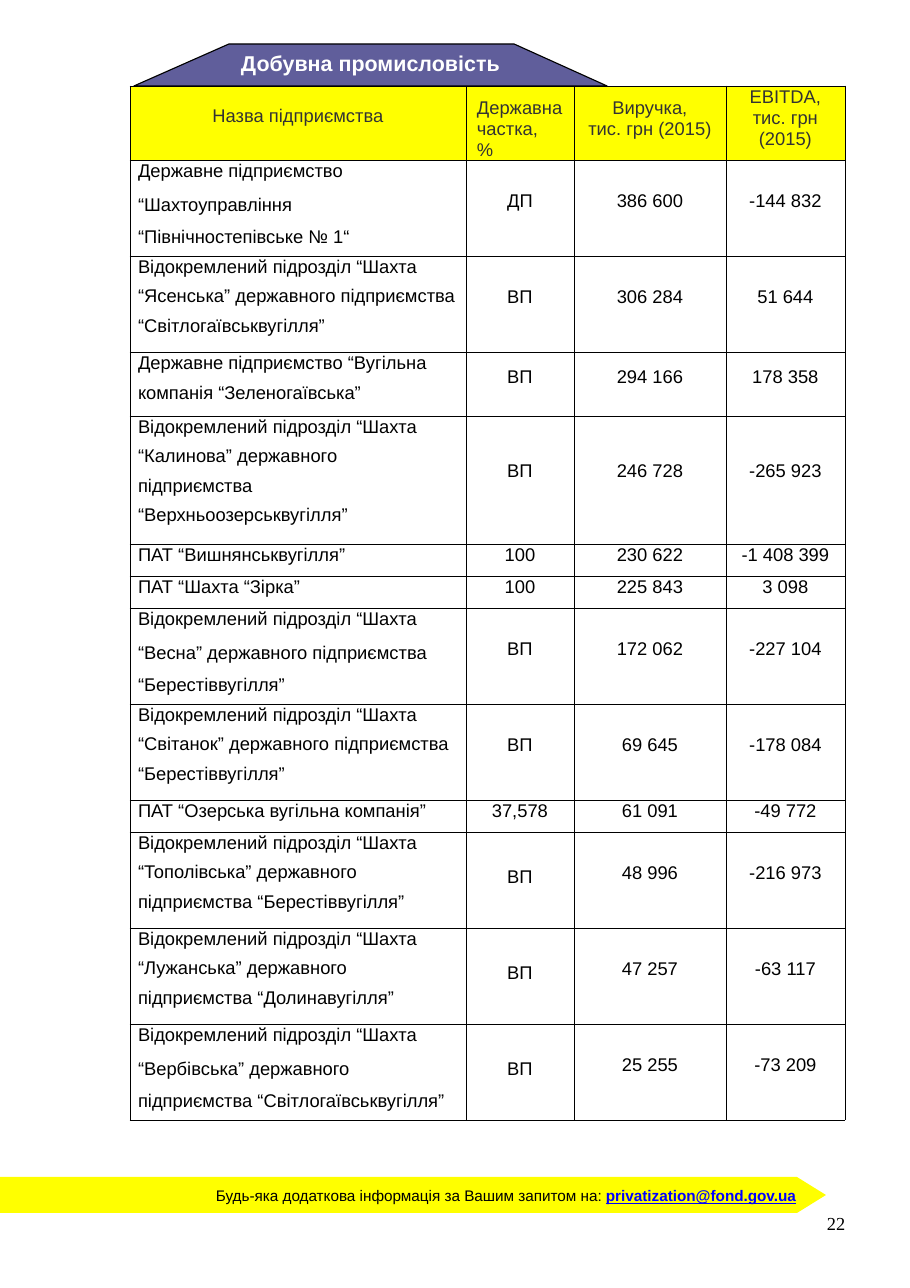
from lxml import etree
from pptx import Presentation
from pptx.dml.color import RGBColor
from pptx.enum.text import MSO_ANCHOR, PP_ALIGN as Align
from pptx.oxml.ns import qn
from pptx.util import Pt

PX = 8298  # EMU in one px
SLIDE_W, SLIDE_H = 910, 1288

BLACK = RGBColor(0x00, 0x00, 0x00)
WHITE = RGBColor(0xFF, 0xFF, 0xFF)
GRAPHITE = RGBColor(0x33, 0x33, 0x33)
YELLOW = RGBColor(0xFF, 0xFF, 0x00)
VIOLET = RGBColor(0x60, 0x5E, 0x9B)
LINK_BLUE = RGBColor(0x00, 0x00, 0xFF)

TITLE = "Добувна промисловість"
CONTACT = "Будь-яка додаткова інформація за Вашим запитом на: "
EMAIL = "privatization@fond.gov.ua"
PAGE = "22"

# Heading lines, alignment, top margin, left margin
HEADINGS = [
    (["Назва підприємства"], Align.CENTER, 19, 0),
    (["Державна", "частка,", "%"], Align.LEFT, 11, 11),
    (["Виручка,", "тис. грн (2015)"], Align.CENTER, 11, 0),
    (["EBITDA,", "тис. грн", "(2015)"], Align.CENTER, 0, 0),
]

# Line spacing and space before for the lines below the first one
WIDE = (Pt(20.8), Pt(1.6))
LOOSE = (1.43, Pt(0.1))
SINGLE = (1.0, Pt(6.4))

UNIT_MINE = "Відокремлений підрозділ “Шахта"

# Name lines, their spacing, state share, revenue, EBITDA
ENTERPRISES = [
    (["Державне підприємство", "“Шахтоуправління", "“Північностепівське № 1“"],
     WIDE, "ДП", "386 600", "-144 832"),
    ([UNIT_MINE, "“Ясенська” державного підприємства", "“Світлогаївськвугілля”"],
     LOOSE, "ВП", "306 284", "51 644"),
    (["Державне підприємство “Вугільна", "компанія “Зеленогаївська”"],
     SINGLE, "ВП", "294 166", "178 358"),
    ([UNIT_MINE, "“Калинова” державного", "підприємства", "“Верхньоозерськвугілля”"],
     LOOSE, "ВП", "246 728", "-265 923"),
    (["ПАТ “Вишнянськвугілля”"], SINGLE, "100", "230 622", "-1 408 399"),
    (["ПАТ “Шахта “Зірка”"], SINGLE, "100", "225 843", "3 098"),
    ([UNIT_MINE, "“Весна” державного підприємства", "“Берестіввугілля”"],
     WIDE, "ВП", "172 062", "-227 104"),
    ([UNIT_MINE, "“Світанок” державного підприємства", "“Берестіввугілля”"],
     LOOSE, "ВП", "69 645", "-178 084"),
    (["ПАТ “Озерська вугільна компанія”"], SINGLE, "37,578", "61 091", "-49 772"),
    ([UNIT_MINE, "“Тополівська” державного", "підприємства “Берестіввугілля”"],
     LOOSE, "ВП", "48 996", "-216 973"),
    ([UNIT_MINE, "“Лужанська” державного", "підприємства “Долинавугілля”"],
     LOOSE, "ВП", "47 257", "-63 117"),
    ([UNIT_MINE, "“Вербівська” державного", "підприємства “Світлогаївськвугілля”"],
     WIDE, "ВП", "25 255", "-73 209"),
]

TABLE_LEFT, TABLE_TOP = 130, 86
COLUMN_WIDTHS = [336, 108, 152, 119]
HEADING_HEIGHT, LINE_HEIGHT = 74, 32
VALUE_TOP = {1: 0, 2: 14, 3: 30, 4: 44}  # by number of name lines
LOWER_SHARE_TOP, LOWER_SHARE_ROWS = 34, 3
NAME_LEFT = 8

TITLE_OUTLINE = [(229, 44), (514, 44), (607, 86), (134, 86)]
CONTACT_OUTLINE = [(0, 1177), (797, 1177), (826, 1195), (797, 1213), (0, 1213)]


def style(paragraph, size, color, font="Arial", bold=False):
    paragraph.font.size = Pt(size)
    paragraph.font.name = font
    paragraph.font.color.rgb = color
    paragraph.font.bold = bold


def add_outline(slide, points, fill, line=None):
    builder = slide.shapes.build_freeform(*points[0], scale=PX)
    builder.add_line_segments(points[1:], close=True)
    shape = builder.convert_to_shape()
    shape.shadow.inherit = False
    shape.fill.solid()
    shape.fill.fore_color.rgb = fill
    if line is None:
        shape.line.fill.background()
    else:
        shape.line.color.rgb = line
        shape.line.width = Pt(0.75)


def add_label(slide, box, text):
    """Add a one-line text box without margins and return its paragraph."""
    frame = slide.shapes.add_textbox(*(n * PX for n in box)).text_frame
    frame.margin_left = frame.margin_top = frame.margin_right = frame.margin_bottom = 0
    frame.word_wrap = False
    paragraph = frame.paragraphs[0]
    paragraph.add_run().text = text
    return paragraph


def add_borders(cell):
    properties = cell._tc.get_or_add_tcPr()
    for index, side in enumerate(("lnL", "lnR", "lnT", "lnB")):
        border = etree.Element(qn(f"a:{side}"), w=str(Pt(0.48)))
        fill = etree.SubElement(border, qn("a:solidFill"))
        etree.SubElement(fill, qn("a:srgbClr"), val=str(BLACK))
        properties.insert(index, border)


def fill_cell(cell, paragraphs, align, color, top, left=0, background=None):
    """Write (text, line spacing, space before) paragraphs into a bordered cell."""
    cell.margin_left, cell.margin_top = left * PX, top * PX
    cell.margin_right = cell.margin_bottom = 0
    cell.vertical_anchor = MSO_ANCHOR.TOP
    if background is None:
        cell.fill.background()
    else:
        cell.fill.solid()
        cell.fill.fore_color.rgb = background
    add_borders(cell)
    frame = cell.text_frame
    for index, (text, spacing, before) in enumerate(paragraphs):
        paragraph = frame.add_paragraph() if index else frame.paragraphs[0]
        paragraph.text = text
        paragraph.alignment = align
        paragraph.line_spacing = spacing
        paragraph.space_before = before
        style(paragraph, 12, color)


def add_enterprises(slide):
    heights = [HEADING_HEIGHT] + [LINE_HEIGHT * len(row[0]) for row in ENTERPRISES]
    table = slide.shapes.add_table(
        len(heights), len(COLUMN_WIDTHS), TABLE_LEFT * PX, TABLE_TOP * PX,
        sum(COLUMN_WIDTHS) * PX, sum(heights) * PX).table
    table.first_row = table.horz_banding = False
    for column, width in zip(table.columns, COLUMN_WIDTHS):
        column.width = width * PX
    for row, height in zip(table.rows, heights):
        row.height = height * PX

    for column, (lines, align, top, left) in enumerate(HEADINGS):
        fill_cell(table.cell(0, column), [("\v".join(lines), Pt(13.8), 0)],
                  align, GRAPHITE, top, left, YELLOW)

    for row, (name, (spacing, before), *values) in enumerate(ENTERPRISES, 1):
        paragraphs = [(name[0], Pt(13.6), 0)]
        if name[1:]:
            paragraphs.append(("\v".join(name[1:]), spacing, before))
        fill_cell(table.cell(row, 0), paragraphs, Align.LEFT, BLACK, 0, NAME_LEFT)
        for column, value in enumerate(values, 1):
            lower = column == 1 and row > len(ENTERPRISES) - LOWER_SHARE_ROWS
            top = LOWER_SHARE_TOP if lower else VALUE_TOP[len(name)]
            fill_cell(table.cell(row, column), [(value, Pt(13.6), 0)],
                      Align.CENTER, BLACK, top)


def main():
    deck = Presentation()
    deck.slide_width, deck.slide_height = SLIDE_W * PX, SLIDE_H * PX
    slide = deck.slides.add_slide(deck.slide_layouts[6])

    add_outline(slide, CONTACT_OUTLINE, YELLOW)
    add_enterprises(slide)
    add_outline(slide, TITLE_OUTLINE, VIOLET, BLACK)
    style(add_label(slide, (241, 50, 262, 28), TITLE), 14, WHITE, bold=True)

    contact = add_label(slide, (216, 1186, 587, 20), CONTACT)
    style(contact, 10, BLACK)
    email = contact.add_run()
    email.text = EMAIL
    email.font.bold = email.font.underline = True
    email.font.color.rgb = LINK_BLUE

    style(add_label(slide, (827, 1212, 24, 23), PAGE), 12, BLACK, "Times New Roman")
    deck.save("out.pptx")


if __name__ == "__main__":
    main()
